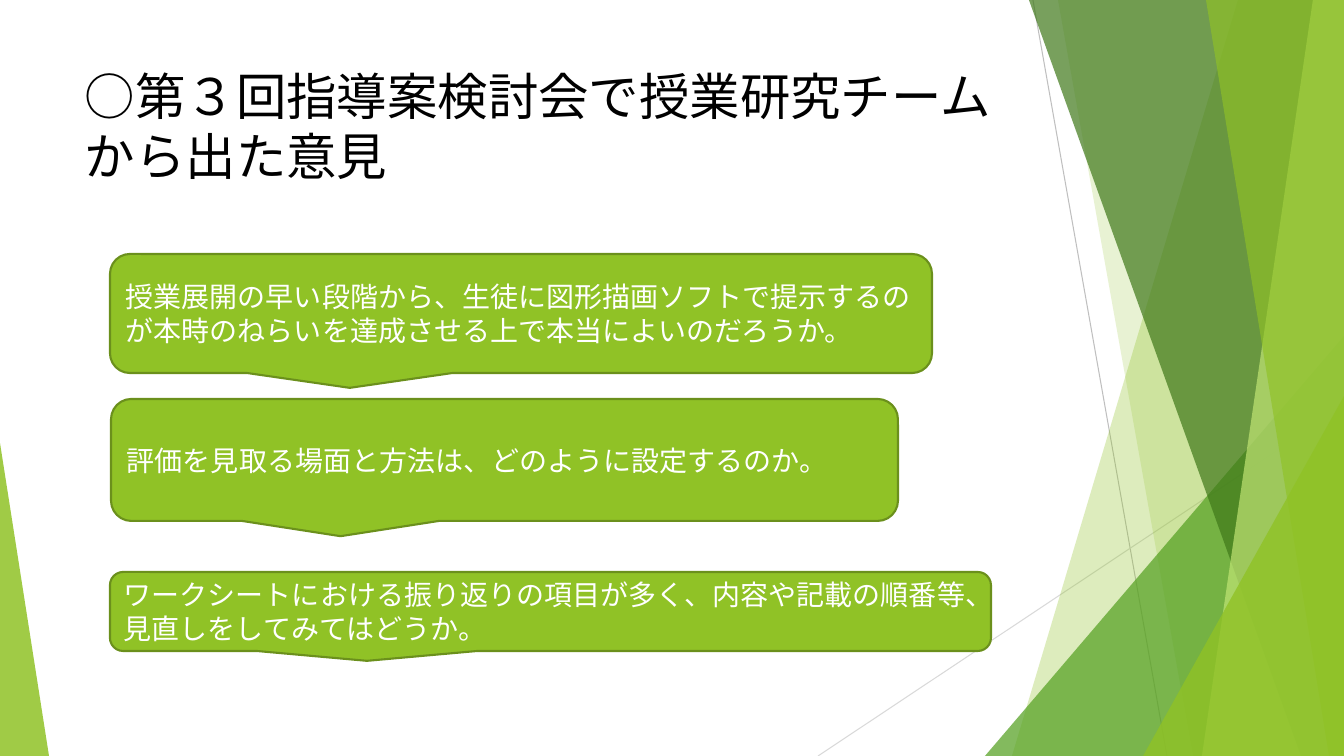
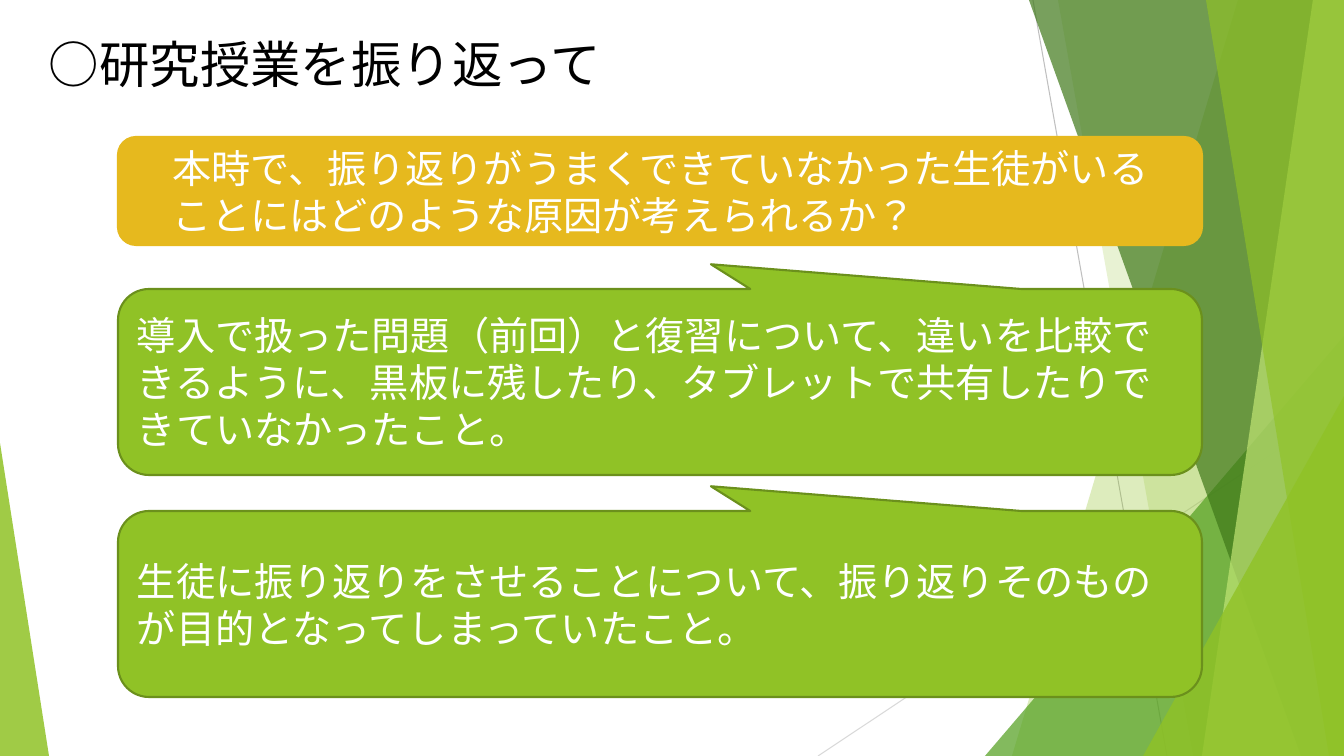
from lxml.etree import SubElement
from pptx import Presentation
from pptx.dml.color import RGBColor
from pptx.enum.lang import MSO_LANGUAGE_ID as Language
from pptx.enum.shapes import MSO_CONNECTOR as Connector, MSO_SHAPE as Shape
from pptx.enum.text import MSO_ANCHOR as Anchor, PP_ALIGN as Align
from pptx.oxml.ns import qn
from pptx.util import Pt

PX = 914400 / 100.8
WIDTH, HEIGHT = 1344, 756
COLORS = {
    "green": "90C226",
    "edge": "6B901C",
    "leaf": "54A021",
    "forest": "3F7819",
    "lime": "C0E474",
    "gold": "E6B91E",
    "gray": "BFBFBF",
    "silver": "D9D9D9",
    "black": "000000",
    "white": "FFFFFF",
}


def px(*lengths):
    return [round(length * PX) for length in lengths]


def rgb(name):
    return RGBColor.from_string(COLORS[name])


class Deck:
    def __init__(self):
        self.show = Presentation()
        self.show.slide_width, self.show.slide_height = px(WIDTH, HEIGHT)
        self.page = None

    def add_page(self, title, place, font):
        self.page = self.show.slides.add_slide(self.show.slide_layouts[6])
        self.decorate()
        box = self.page.shapes.add_textbox(*px(*place))
        self.set_text(box.text_frame, [title], 36, "black", font)

    def decorate(self):
        self.line((1033, 0), (1167, HEIGHT), "gray")
        self.line((WIDTH, 406), (818, HEIGHT), "silver")
        self.band(1238, 1012, "green", 30)
        self.band(1058, 1193, "green", 20)
        self.triangle((985, 336, 359, 420), 1, "leaf", 72)
        self.band(1029, 1301, "forest", 70)
        self.band(1313, 1202, "lime", 70)
        self.band(1206, 1329, "green", 65)
        self.triangle((1143, 396, 201, 360), 1, "green", 80)
        self.triangle((0, 443, 49, 313), 0, "green", 85)

    def line(self, start, end, color):
        line = self.page.shapes.add_connector(Connector.STRAIGHT, *px(*start, *end))
        line.line.color.rgb = rgb(color)
        line.line.width = Pt(0.75)
        SubElement(line._element.spPr, qn("a:effectLst"))

    def band(self, top_x, bottom_x, color, opacity):
        """Fill from a slanted left edge to the right side of the page."""
        builder = self.page.shapes.build_freeform(top_x, 0, scale=PX)
        builder.add_line_segments([(WIDTH, 0), (WIDTH, HEIGHT), (bottom_x, HEIGHT)])
        self.tint(builder.convert_to_shape(), color, opacity)

    def triangle(self, place, apex, color, opacity):
        shape = self.page.shapes.add_shape(Shape.ISOSCELES_TRIANGLE, *px(*place))
        shape.adjustments[0] = apex
        self.tint(shape, color, opacity)

    def tint(self, shape, color, opacity):
        """Give a shape a see-through fill and no outline."""
        shape.shadow.inherit = False
        shape.fill.solid()
        shape.fill.fore_color.rgb = rgb(color)
        shape.line.fill.background()
        tone = shape._element.spPr.find(qn("a:solidFill"))[0]
        SubElement(tone, qn("a:alpha"), val=str(opacity * 1000))

    def panel(self, kind, place, lines, size, fill, edge, align=Align.LEFT):
        shape = self.page.shapes.add_shape(kind, *px(*place))
        shape.shadow.inherit = False
        shape.fill.solid()
        shape.fill.fore_color.rgb = rgb(fill)
        shape.line.color.rgb = rgb(edge)
        shape.line.width = Pt(1.5)
        self.set_text(shape.text_frame, lines, size, "white", "Cabin", align, Anchor.MIDDLE)
        return shape

    def callout(self, place, text, size, tail=None):
        shape = self.panel(Shape.ROUNDED_RECTANGULAR_CALLOUT, place, [text], size,
                           "green", "edge")
        if tail:
            shape.adjustments[0], shape.adjustments[1] = tail

    def set_text(self, frame, lines, size, color, font, align=Align.LEFT, anchor=Anchor.TOP):
        frame.word_wrap = True
        frame.vertical_anchor = anchor
        for index, text in enumerate(lines):
            para = frame.add_paragraph() if index else frame.paragraphs[0]
            para.text = text
            para.alignment = align
            para.font.size = Pt(size)
            para.font.name = font
            para.font.color.rgb = rgb(color)
            para.font.language_id = Language.JAPANESE


def add_opinions(deck):
    deck.add_page("○第３回指導案検討会で授業研究チームから出た意見", (75, 60, 948, 145), "Arial")
    opinions = [
        ((110, 254, 822, 119),
         "授業展開の早い段階から、生徒に図形描画ソフトで提示するのが本時のねらいを達成させる上で本当によいのだろうか。"),
        ((111, 399, 787, 122),
         "評価を見取る場面と方法は、どのように設定するのか。"),
        ((110, 572, 881, 79),
         "ワークシートにおける振り返りの項目が多く、内容や記載の順番等、見直しをしてみてはどうか。"),
    ]
    for place, text in opinions:
        deck.callout(place, text, 20)


def add_reflection(deck):
    deck.add_page("○研究授業を振り返って", (39, 28, 647, 80), "Cabin")
    left, width = 118, 1084
    question = [
        "　本時で、振り返りがうまくできていなかった生徒がいる",
        "　ことにはどのような原因が考えられるか？",
    ]
    deck.panel(Shape.ROUNDED_RECTANGLE, (left, 137, width, 108), question, 28,
               "gold", "gold", Align.JUSTIFY)
    causes = [
        "導入で扱った問題（前回）と復習について、違いを比較できるように、黒板に残したり、タブレットで共有したりできていなかったこと。",
        "生徒に振り返りをさせることについて、振り返りそのものが目的となってしまっていたこと。",
    ]
    for index, text in enumerate(causes):
        deck.callout((left, 289 + 222 * index, width, 186), text, 28, (0.047, -0.633))


def main():
    deck = Deck()
    add_opinions(deck)
    add_reflection(deck)
    deck.show.save("out.pptx")


if __name__ == "__main__":
    main()
